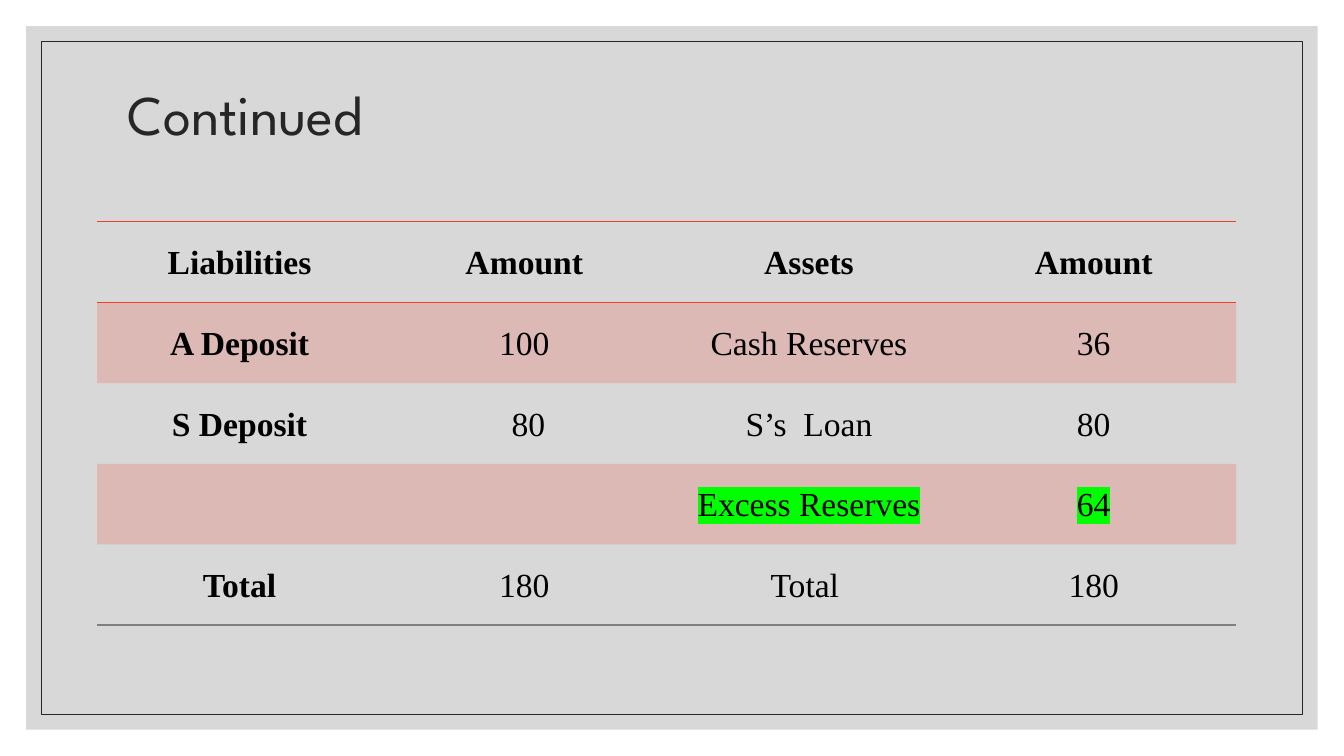
import pptx
import pptx.util
import pptx.dml.color
import pptx.enum.shapes
import pptx.enum.text
import pptx.oxml
import pptx.oxml.ns

Cm, Pt = pptx.util.Cm, pptx.util.Pt
qn = pptx.oxml.ns.qn

# Content
TITLE = "Continued"
ROWS = [
    ("Liabilities", "Amount", "Assets", "Amount"),
    ("A Deposit", "100", "Cash Reserves", "36"),
    ("S Deposit", " 80", "S’s  Loan", "80"),
    ("", "", "Excess Reserves", "64"),
    ("Total", "180", "Total ", "180"),
]
MARKED = 3  # row with highlighted text

THEME = {
    "panel": "BFBFBF", "ink": "262626", "text": "000000",
    "accent": "F03F2B", "foot": "7F7F7F", "mark": "00FF00",
    "head font": "League Spartan", "body font": "Times New Roman",
    "head size": 40, "body size": 24,
}
PLAIN = "{2D5ABB26-0587-4C30-8999-92F81FD0307C}"  # table style without grid

# Layout in cm: left, top, width, height
WIDE, HIGH = 33.87, 19.05
TITLE_BOX = (2.97, 1.78, 27.94, 2.34)
GRID_BOX = (2.45, 5.59, 28.7, 10.16)


def rgb(name):
    return pptx.dml.color.RGBColor.from_string(THEME[name])


def apply(item, values):
    for key, value in values.items():
        setattr(item, key, value)


def paint(fill, name):
    fill.solid()
    fill.fore_color.rgb = rgb(name)


def fade(node, share):
    for color in node.iter(qn("a:srgbClr")):
        alpha = color.makeelement(qn("a:alpha"), {"val": str(share * 1000)})
        color.append(alpha)


def add_frame(slide, gap):
    frame = slide.shapes.add_shape(
        pptx.enum.shapes.MSO_SHAPE.RECTANGLE,
        Cm(gap), Cm(gap), Cm(WIDE - 2 * gap), Cm(HIGH - 2 * gap))
    frame.shadow.inherit = False
    return frame


def add_edge(cell, side, name, place):
    edge = pptx.oxml.parse_xml(
        f'<a:{side} xmlns:a="http://schemas.openxmlformats.org/drawingml/2006/main"'
        f' w="12700"><a:solidFill><a:srgbClr val="{THEME[name]}"/></a:solidFill>'
        f'</a:{side}>')
    cell._tc.get_or_add_tcPr().insert(place, edge)


def mark(run):
    props = run.font._element
    glow = props.makeelement(qn("a:highlight"), {})
    glow.append(glow.makeelement(qn("a:srgbClr"), {"val": THEME["mark"]}))
    props.find(qn("a:solidFill")).addnext(glow)


def fill_cell(cell, text, row, col):
    apply(cell, {"margin_left": Cm(0.19), "margin_right": Cm(0.19),
                 "margin_top": 0, "margin_bottom": 0,
                 "vertical_anchor": pptx.enum.text.MSO_ANCHOR.MIDDLE})
    para = cell.text_frame.paragraphs[0]
    apply(para, {"alignment": pptx.enum.text.PP_ALIGN.CENTER,
                 "line_spacing": 1.07, "space_after": Pt(8)})
    if text:
        run = para.add_run()
        run.text = text
        apply(run.font, {"name": THEME["body font"], "size": Pt(THEME["body size"]),
                         "bold": row == 0 or col == 0})
        run.font.color.rgb = rgb("text")
        if row == MARKED:
            mark(run)

    # Odd rows are banded, the rest show the panel
    if row % 2:
        paint(cell.fill, "accent")
        fade(cell._tc.tcPr, 20)
    else:
        cell.fill.background()

    # Rules above and below the header, and under the last row
    if row == 0:
        add_edge(cell, "lnT", "accent", 0)
        add_edge(cell, "lnB", "accent", 1)
    elif row == len(ROWS) - 1:
        add_edge(cell, "lnB", "foot", 0)


def main():
    deck = pptx.Presentation()
    apply(deck, {"slide_width": Cm(WIDE), "slide_height": Cm(HIGH)})
    slide = deck.slides.add_slide(deck.slide_layouts[5])

    # Panel and inner outline
    panel = add_frame(slide, 0.66)
    paint(panel.fill, "panel")
    fade(panel.fill._xPr, 60)
    panel.line.fill.background()
    rim = add_frame(slide, 1.04)
    rim.fill.background()
    rim.line.color.rgb = rgb("ink")
    rim.line.width = Pt(0.5)

    # Title, in front of the panel
    title = slide.shapes.title
    slide.shapes.element.append(title.element)
    apply(title, dict(zip(("left", "top", "width", "height"), map(Cm, TITLE_BOX))))
    title.text_frame.text = TITLE
    title.text_frame.vertical_anchor = pptx.enum.text.MSO_ANCHOR.MIDDLE
    para = title.text_frame.paragraphs[0]
    apply(para, {"alignment": pptx.enum.text.PP_ALIGN.LEFT, "line_spacing": 0.9})
    font = para.runs[0].font
    apply(font, {"name": THEME["head font"], "size": Pt(THEME["head size"])})
    font.color.rgb = rgb("ink")

    # Balance table
    table = slide.shapes.add_table(
        len(ROWS), len(ROWS[0]), *map(Cm, GRID_BOX)).table
    apply(table, {"first_row": False, "horz_banding": False})
    table._tbl.tblPr.find(qn("a:tableStyleId")).text = PLAIN
    for row, texts in enumerate(ROWS):
        for col, text in enumerate(texts):
            fill_cell(table.cell(row, col), text, row, col)

    deck.save("out.pptx")


if __name__ == "__main__":
    main()
